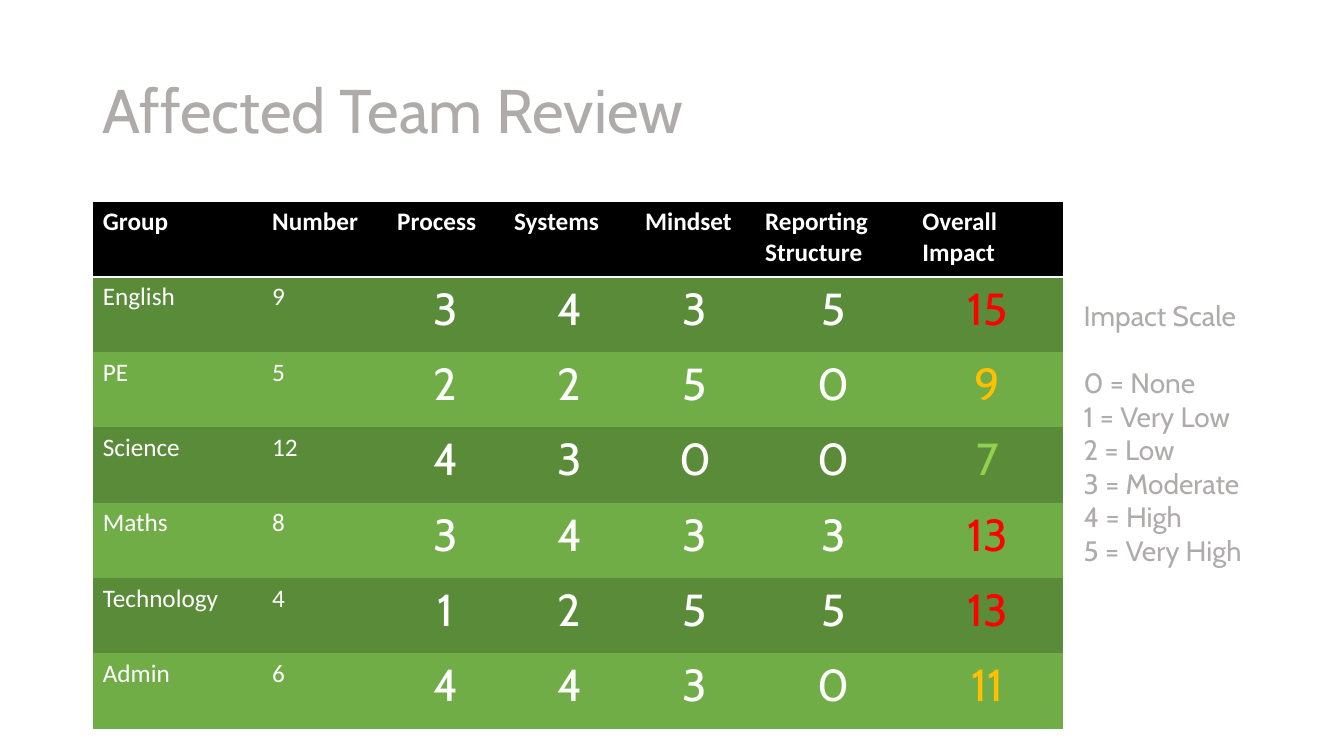
from dataclasses import dataclass

from lxml import etree
from pptx import Presentation
from pptx.dml.color import RGBColor
from pptx.enum.text import MSO_ANCHOR, MSO_AUTO_SIZE, PP_ALIGN
from pptx.oxml.ns import qn
from pptx.util import Inches, Pt

LEFT, CENTER = PP_ALIGN.LEFT, PP_ALIGN.CENTER
MIDDLE = MSO_ANCHOR.MIDDLE
NO_FIT, GROW = MSO_AUTO_SIZE.NONE, MSO_AUTO_SIZE.SHAPE_TO_FIT_TEXT
PLAIN_TABLE = "{2D5ABB26-0587-4C30-8999-92F81FD0307C}"
SLIDE_WIDTH, SLIDE_HEIGHT = 13.33, 7.5


@dataclass(frozen=True)
class Theme:
    display: str = "Cabin"
    body: str = "Calibri"
    grey: str = "AFABAB"
    white: str = "FFFFFF"
    header: str = "000000"
    bands: tuple = ("5A8B39", "70AD47")
    high: str = "FF0000"
    medium: str = "FFC000"
    low: str = "92D050"
    title_size: int = 44
    score_size: int = 32
    scale_size: int = 20
    label_size: int = 18


THEME = Theme()

# Boxes: left, top, width, height in inches
TITLE_BOX = (0.92, 0.4, 11.5, 1.45)
TABLE_BOX = (0.92, 2, 9.62, 5.23)
SCALE_BOX = (10.65, 2.91, 2.54, 2.79)

COLUMN_SHARES = (1.68, 1.24, 1.16, 1.3, 1.19, 1.56, 1.49)
HEADINGS = ("Group", "Number", "Process", "Systems", "Mindset",
            "Reporting Structure", "Overall Impact")
# Team, headcount, impact scores
TEAMS = (
    ("English", 9, (3, 4, 3, 5)),
    ("PE", 5, (2, 2, 5, 0)),
    ("Science", 12, (4, 3, 0, 0)),
    ("Maths", 8, (3, 4, 3, 3)),
    ("Technology", 4, (1, 2, 5, 5)),
    ("Admin", 6, (4, 4, 3, 0)),
)
IMPACT_LEVELS = ("None", "Very Low", "Low", "Moderate", "High", "Very High")


def write(para, text, color, align=LEFT, **font_format):
    para.alignment = align
    span = para.add_run()
    span.text = text
    span.font.color.rgb = RGBColor.from_string(color)
    for name, value in font_format.items():
        setattr(span.font, name, value)


def underline_cell(cell, color, width):
    line = etree.Element(qn("a:lnB"), w=str(width))
    fill = etree.SubElement(line, qn("a:solidFill"))
    etree.SubElement(fill, qn("a:srgbClr"), val=color)
    # Borders come before the fill in the cell properties
    cell._tc.get_or_add_tcPr().insert(0, line)


def fill_cell(cell, text, fill, color, **text_format):
    cell.fill.solid()
    cell.fill.fore_color.rgb = RGBColor.from_string(fill)
    write(cell.text_frame.paragraphs[0], text, color, **text_format)


def impact_color(total):
    if total > 12:
        return THEME.high
    return THEME.medium if total > 8 else THEME.low


def add_title(page, box):
    title = page.shapes.title
    title.left, title.top, title.width, title.height = map(Inches, box)
    frame = title.text_frame
    frame.auto_size, frame.vertical_anchor = NO_FIT, MIDDLE
    para = frame.paragraphs[0]
    para.line_spacing = 0.9
    write(para, "Affected Team Review", THEME.grey,
          name=THEME.display, size=Pt(THEME.title_size))


def add_review_table(page, box):
    graphic = page.shapes.add_table(len(TEAMS) + 1, len(HEADINGS), *map(Inches, box))
    table = graphic.table
    table._tbl.tblPr.find(qn("a:tableStyleId")).text = PLAIN_TABLE
    for column, share in zip(table.columns, COLUMN_SHARES):
        column.width = Inches(box[2] * share / sum(COLUMN_SHARES))

    label = {"name": THEME.body, "size": Pt(THEME.label_size)}
    score = {"name": THEME.display, "size": Pt(THEME.score_size), "align": CENTER}

    # Header row
    for column, heading in enumerate(HEADINGS):
        cell = table.cell(0, column)
        fill_cell(cell, heading, THEME.header, THEME.white, bold=True, **label)
        underline_cell(cell, THEME.white, Pt(2))

    # One banded row per team, closed by its total
    for row, (team, headcount, scores) in enumerate(TEAMS, start=1):
        band = THEME.bands[(row - 1) % 2]
        total = sum(scores)
        for column, value in enumerate((team, headcount, *scores, total)):
            color = impact_color(total) if column == len(HEADINGS) - 1 else THEME.white
            style = label if column < 2 else score
            fill_cell(table.cell(row, column), str(value), band, color, **style)


def add_impact_scale(page, box):
    frame = page.shapes.add_textbox(*map(Inches, box)).text_frame
    frame.word_wrap, frame.auto_size = True, GROW
    style = {"name": THEME.display, "size": Pt(THEME.scale_size)}
    heading = frame.paragraphs[0]
    heading.space_after = Pt(24)
    write(heading, "Impact Scale", THEME.grey, **style)
    for number, level in enumerate(IMPACT_LEVELS):
        write(frame.add_paragraph(), f"{number} = {level}", THEME.grey, **style)


def main():
    deck = Presentation()
    deck.slide_width, deck.slide_height = Inches(SLIDE_WIDTH), Inches(SLIDE_HEIGHT)
    page = deck.slides.add_slide(deck.slide_layouts.get_by_name("Title Only"))
    add_title(page, TITLE_BOX)
    add_review_table(page, TABLE_BOX)
    add_impact_scale(page, SCALE_BOX)
    deck.save("out.pptx")


if __name__ == "__main__":
    main()
